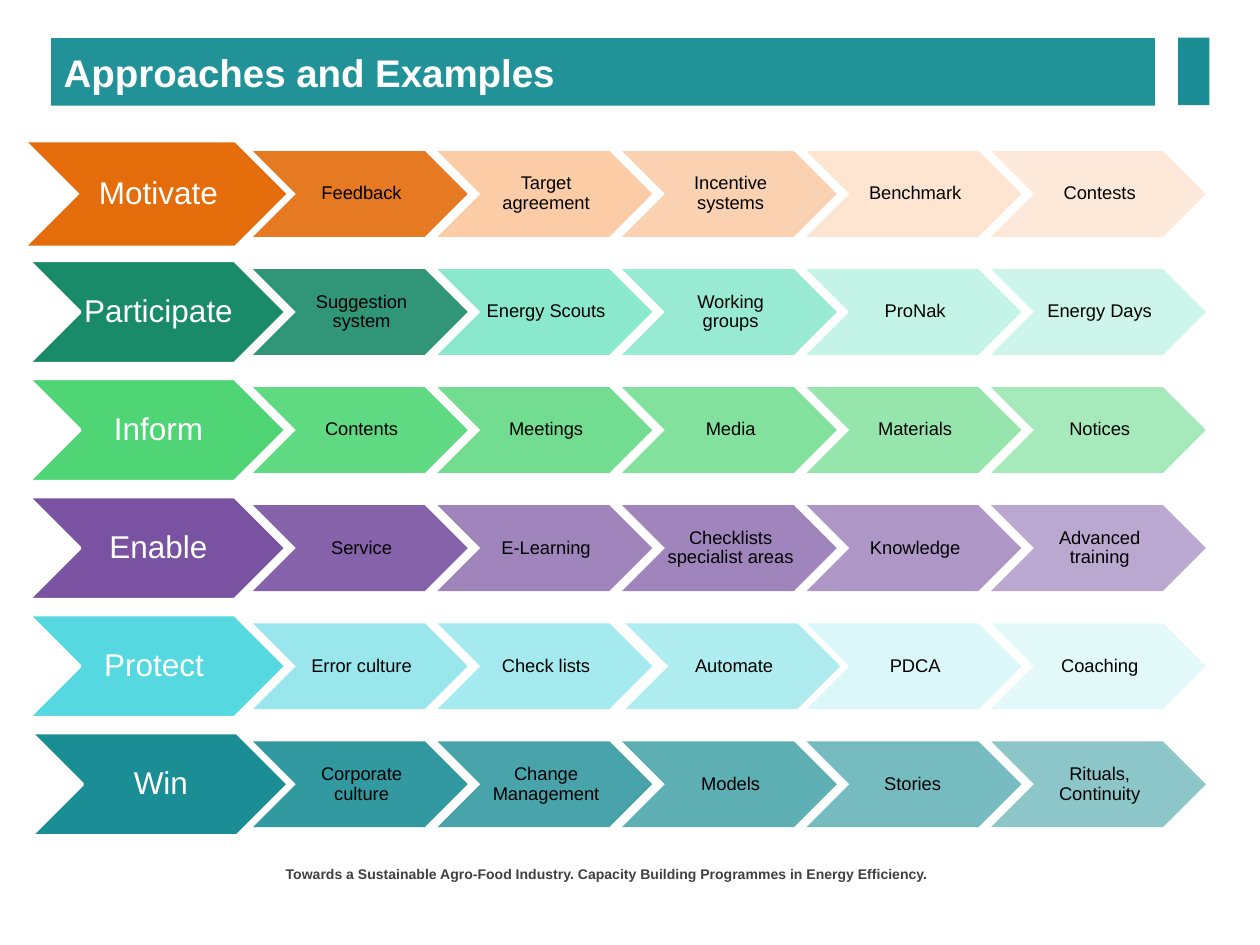
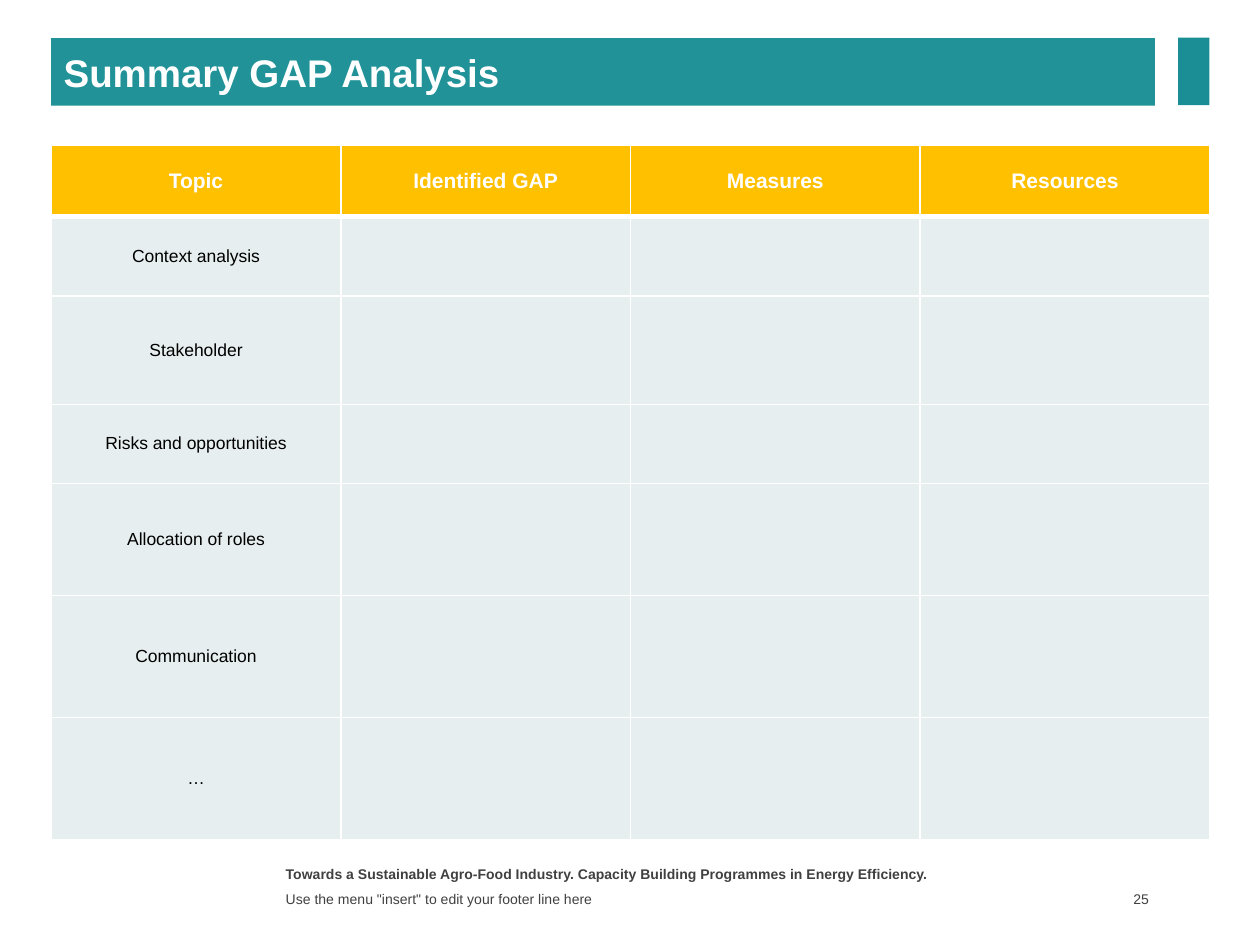
from lxml.etree import SubElement
from pptx import Presentation
from pptx.dml.color import RGBColor
from pptx.enum.shapes import MSO_SHAPE
from pptx.enum.text import MSO_ANCHOR, MSO_AUTO_SIZE, PP_ALIGN
from pptx.oxml.ns import qn
from pptx.util import Cm, Pt

TEAL, BAND, WHITE, BLACK, GREY = "1B8E95", "209298", "FFFFFF", "000000", "404040"
AMBER, MIST = "FFC000", "E7EEEF"
PROGRAMME = ("Towards a Sustainable Agro-Food Industry. "
             "Capacity Building Programmes in Energy Efficiency.")

APPROACHES = [
    ("Motivate", "E46C0A", ["E46C0A", "FAC090", "FAC090", "FCD5B5", "FCD5B5"],
     ["Feedback", "Target agreement", "Incentive systems", "Benchmark", "Contests"]),
    ("Participate", "1A8B69", ["1A8B69", "6DE3C0", "6DE3C0", "9DEDD5", "9DEDD5"],
     ["Suggestion system", "Energy Scouts", "Working groups", "ProNak", "Energy Days"]),
    ("Inform", "4FD576", ["4FD576"] * 5,
     ["Contents", "Meetings", "Media", "Materials", "Notices"]),
    ("Enable", "7952A2", ["7952A2"] * 5,
     ["Service", "E-Learning", "Checklists specialist areas", "Knowledge", "Advanced training"]),
    ("Protect ", "55D8E0", ["8EE5EB"] * 3 + ["C6F2F5"] * 2,
     ["Error culture", "Check lists", "Automate", "PDCA", "Coaching"]),
    ("Win", TEAL, [TEAL] * 5,
     ["Corporate culture", "Change Management", "Models", "Stories ", "Rituals, Continuity"]),
]
OPACITY = {"E-Learning": 70}
NUDGE = {"Automate": 0.07, "Win": 0.05}

HEADINGS = ["Topic", "Identified GAP", "Measures", "Resources"]
TOPICS = ["Context analysis", "Stakeholder", "Risks and opportunities",
          "Allocation of roles", "Communication", "…"]
ROW_HEIGHTS = [1.44, 1.6, 2.18, 1.6, 2.26, 2.46, 2.46]


def rgb(value):
    return RGBColor.from_string(value)


class Deck:
    font = "Arial"

    def __init__(self):
        self.prs = Presentation()
        self.prs.slide_width, self.prs.slide_height = Cm(25.4), Cm(19.05)
        self.s = None

    def slide(self, title):
        self.s = self.prs.slides.add_slide(self.prs.slide_layouts[5])
        sp = self.s.shapes.title
        sp.left, sp.top, sp.width, sp.height = Cm(1.03), Cm(0.77), Cm(22.25), Cm(1.36)
        self.paint(sp, BAND)
        sp.text_frame.auto_size = MSO_AUTO_SIZE.NONE
        self.put_text(sp.text_frame, title, 22, WHITE, bold=True)
        self.shape(MSO_SHAPE.RECTANGLE, 23.75, 0.76, 0.63, 1.36, TEAL)
        self.text(5.51, 17.35, 13.97, 0.53, PROGRAMME, 8, GREY, bold=True)

    def paint(self, target, color, opacity=100):
        target.fill.solid()
        target.fill.fore_color.rgb = rgb(color)
        if opacity < 100:
            clr = target._element.spPr.find(qn("a:solidFill"))[0]
            SubElement(clr, qn("a:alpha"), val=str(opacity * 1000))

    def put_text(self, tf, text, size, color, bold=False, align=PP_ALIGN.LEFT):
        tf.word_wrap = True
        tf.vertical_anchor = MSO_ANCHOR.MIDDLE
        p = tf.paragraphs[0]
        p.alignment = align
        self.run(p, text, size, color, bold)
        return p

    def run(self, p, text, size, color, bold):
        r = p.add_run()
        r.text = text
        r.font.name, r.font.size, r.font.bold = self.font, Pt(size), bold
        r.font.color.rgb = rgb(color)

    def text(self, x, y, w, h, text, size, color, bold=False, align=PP_ALIGN.LEFT):
        tf = self.s.shapes.add_textbox(Cm(x), Cm(y), Cm(w), Cm(h)).text_frame
        self.put_text(tf, text, size, color, bold, align)
        return tf

    def shape(self, kind, x, y, w, h, color, opacity=100):
        sp = self.s.shapes.add_shape(kind, Cm(x), Cm(y), Cm(w), Cm(h))
        sp.shadow.inherit = False
        self.paint(sp, color, opacity)
        sp.line.fill.background()
        return sp

    def chevron(self, x, middle, w, h, color, text, size, ink, opacity=100):
        x += NUDGE.get(text, 0)
        sp = self.shape(MSO_SHAPE.CHEVRON, x, middle - h / 2, w, h, color, opacity)
        tf = sp.text_frame
        tf.margin_left, tf.margin_right = Cm(0.05), 0
        tf.margin_top = tf.margin_bottom = Cm(0.03)
        self.put_text(tf, text, size, ink, align=PP_ALIGN.CENTER).line_spacing = 0.9
        return sp

    def cell(self, cell, color, top, bottom):
        tcPr = cell._tc.get_or_add_tcPr()
        for side, width in (("L", 1), ("R", 1), ("T", top), ("B", bottom)):
            ln = SubElement(tcPr, qn(f"a:ln{side}"), w=str(int(Pt(width))))
            SubElement(SubElement(ln, qn("a:solidFill")), qn("a:srgbClr"), val=WHITE)
        self.paint(cell, color)
        cell.vertical_anchor = MSO_ANCHOR.MIDDLE

    def cell_text(self, cell, text, size, color, bold):
        p = cell.text_frame.paragraphs[0]
        p.alignment = PP_ALIGN.CENTER
        self.run(p, text, size, color, bold)

    def table(self, x, y, col_width, heights, headings, topics):
        tbl = self.s.shapes.add_table(
            len(heights), len(headings), Cm(x), Cm(y),
            Cm(col_width * len(headings)), Cm(sum(heights))).table
        for col in tbl.columns:
            col.width = Cm(col_width)
        for i, height in enumerate(heights):
            tbl.rows[i].height = Cm(height)
            for cell in tbl.rows[i].cells:
                self.cell(cell, MIST if i else AMBER, 3 if i == 1 else 1, 1 if i else 3)
        for j, heading in enumerate(headings):
            self.cell_text(tbl.cell(0, j), heading, 12, WHITE, True)
        for i, topic in enumerate(topics, 1):
            self.cell_text(tbl.cell(i, 0), topic, 10, BLACK, False)


def approaches(deck):
    deck.slide("Approaches and Examples")
    for i, (name, color, tints, examples) in enumerate(APPROACHES):
        middle = 3.91 + 2.38 * i
        lead = deck.chevron(0.57, middle, 5.2, 2.08, color, name, 18, WHITE)
        if i:
            lead.line.color.rgb = rgb(WHITE)
            lead.line.width = Pt(2)
        for j, (tint, example) in enumerate(zip(tints, examples)):
            deck.chevron(5.1 + 3.72 * j, middle, 4.33, 1.73, tint, example, 10.5, BLACK,
                         OPACITY.get(example, 90 - 10 * j))


def gap_summary(deck):
    deck.slide("Summary GAP Analysis")
    deck.table(1.03, 2.93, 5.84, ROW_HEIGHTS, HEADINGS, TOPICS)
    deck.text(5.51, 17.88, 13.97, 0.48,
              'Use the menu "insert" to edit your footer line here', 8, GREY)
    number = deck.text(21.84, 17.86, 1.42, 0.51, "25", 8, GREY, align=PP_ALIGN.RIGHT)
    number.margin_right = Cm(0.1)


def main():
    deck = Deck()
    approaches(deck)
    gap_summary(deck)
    deck.prs.save("out.pptx")


if __name__ == "__main__":
    main()
